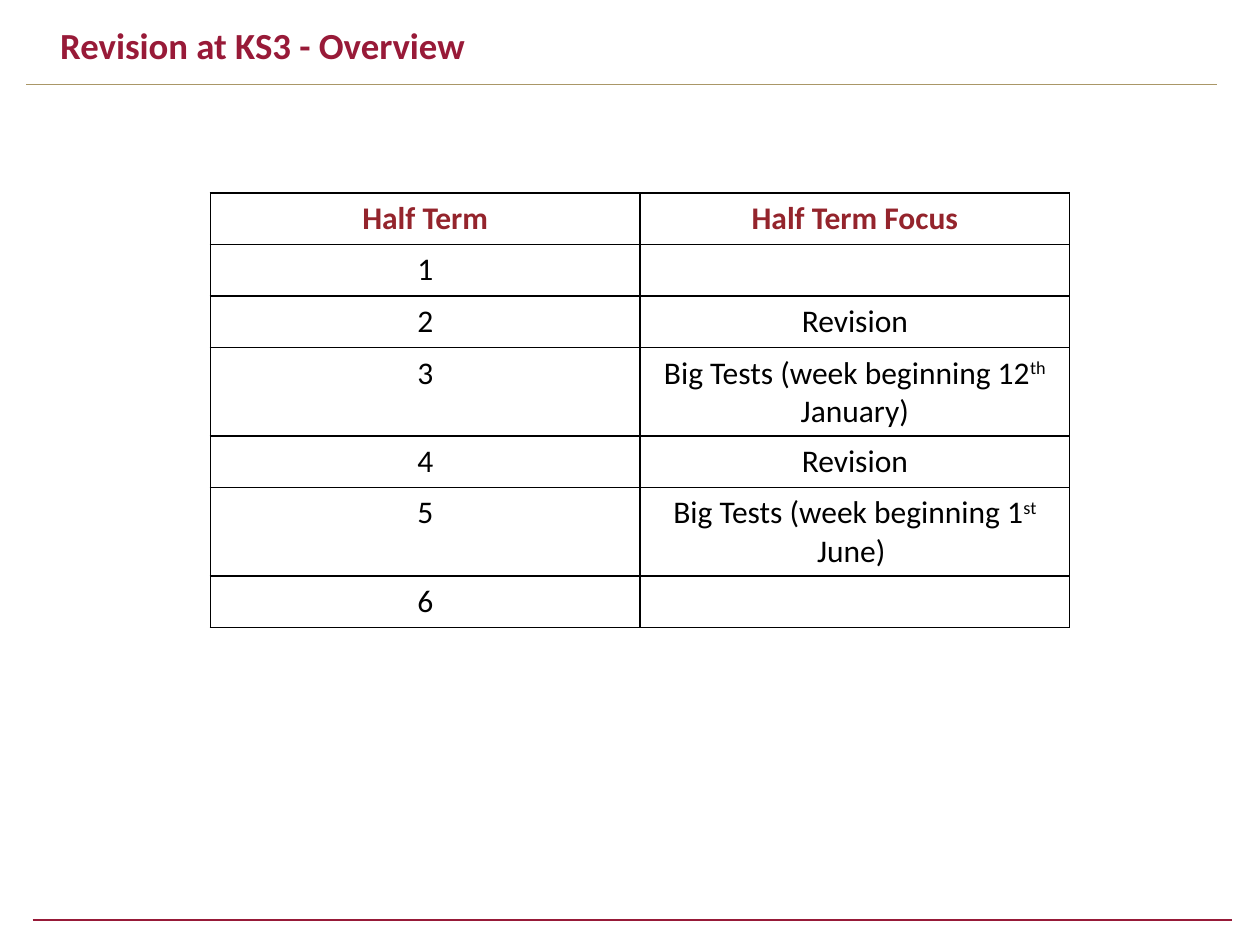
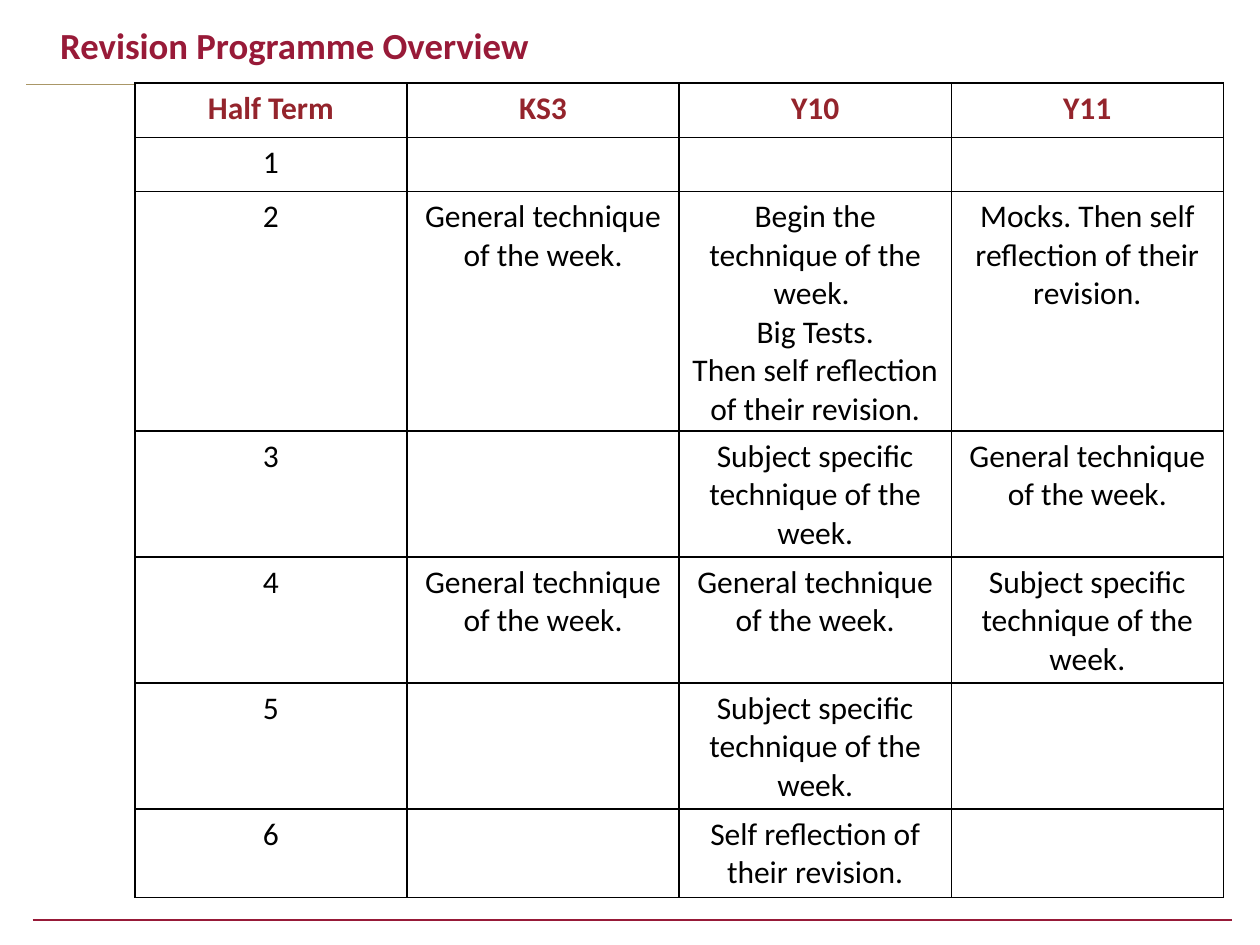
from lxml import etree
from pptx import Presentation
from pptx import util as u
from pptx.dml.color import RGBColor
from pptx.enum import shapes, text
from pptx.oxml.ns import qn

BORDER, FILL = "000000", "FFFFFF"
TITLE = {"name": "Calibri", "size": u.Pt(21), "bold": True, "color": "981A38"}
HEAD = {"name": "Calibri", "size": u.Pt(18), "bold": True, "color": "94242C"}
BODY = {**HEAD, "bold": False, "color": "000000"}

GENERAL = "General technique of the week."
SPECIFIC = "Subject specific technique of the week."
REFLECT = "elf reflection of their revision."


def rgb(color):
    return RGBColor.from_string(color)


def set_font(font, style):
    for key, value in style.items():
        if key == "color":
            font.color.rgb = rgb(value)
        else:
            setattr(font, key, value)


def add_borders(cell, width=1):
    tcPr = cell._tc.get_or_add_tcPr()
    for side in "LRTB":
        ln = etree.SubElement(tcPr, qn(f"a:ln{side}"), w=str(u.Pt(width)))
        fill = etree.SubElement(ln, qn("a:solidFill"))
        etree.SubElement(fill, qn("a:srgbClr"), val=BORDER)


class Deck:
    def __init__(self):
        self.prs = Presentation()
        self.prs.slide_width, self.prs.slide_height = u.Inches(10), u.Inches(7.5)
        self.s = None

    def slide(self, title):
        self.s = self.prs.slides.add_slide(self.prs.slide_layouts[6])
        self.rule(0.26, 9.78, 7.3, "971A38", 1)
        self.rule(0.21, 9.66, 0.67, "AA9767", 0.5)
        self.title(title)

    def rule(self, x1, x2, y, color, width):
        ends = [u.Inches(v) for v in (x1, y, x2, y)]
        line = self.s.shapes.add_connector(shapes.MSO_CONNECTOR.STRAIGHT, *ends)
        line.line.color.rgb = rgb(color)
        line.line.width = u.Pt(width)
        etree.SubElement(line._element.spPr, qn("a:effectLst"))

    def title(self, words):
        box = [u.Inches(v) for v in (0.38, 0.13, 6.27, 0.45)]
        tf = self.s.shapes.add_textbox(*box).text_frame
        tf.word_wrap = True
        self.fill_text(tf, words, TITLE)

    def fill_text(self, tf, words, style, align=None):
        """Add one paragraph per line; text between ^ marks is superscript."""
        for i, line in enumerate(words.split("\n")):
            p = tf.add_paragraph() if i else tf.paragraphs[0]
            p.alignment = align
            set_font(p.font, style)
            for j, part in enumerate(line.split("^")):
                if not part:
                    continue
                r = p.add_run()
                r.text = part
                set_font(r.font, style)
                if j % 2:
                    r._r.get_or_add_rPr().set("baseline", "30000")

    def table(self, x, y, col_width, heights, rows):
        n = len(rows[0])
        size = [u.Inches(v) for v in (x, y, col_width * n, sum(heights))]
        tbl = self.s.shapes.add_table(len(rows), n, *size).table
        for col in tbl.columns:
            col.width = u.Inches(col_width)
        for i, (row, height) in enumerate(zip(rows, heights)):
            tbl.rows[i].height = u.Inches(height)
            for j, words in enumerate(row):
                cell = tbl.cell(i, j)
                add_borders(cell)
                cell.fill.solid()
                cell.fill.fore_color.rgb = rgb(FILL)
                self.fill_text(cell.text_frame, words, BODY if i else HEAD,
                               text.PP_ALIGN.CENTER)


def main():
    deck = Deck()

    deck.slide("Revision at KS3 - Overview")
    deck.table(1.67, 1.53, 3.41, [0.41, 0.41, 0.41, 0.7, 0.41, 0.7, 0.41], [
        ("Half Term", "Half Term Focus"),
        ("1", ""),
        ("2", "Revision"),
        ("3", "Big Tests (week beginning 12^th^ January)"),
        ("4", "Revision"),
        ("5", "Big Tests (week beginning 1^st^ June) "),
        ("6", ""),
    ])

    deck.slide("Revision Programme Overview")
    deck.table(1.07, 0.66, 2.16, [0.43, 0.43, 1.9, 1, 1, 1, 0.7], [
        ("Half Term", "KS3", "Y10", "Y11"),
        ("1", "", "", ""),
        ("2", GENERAL,
         f"Begin the technique of the week. \nBig Tests.\nThen s{REFLECT}",
         f"Mocks. Then s{REFLECT}"),
        ("3", "", SPECIFIC, GENERAL),
        ("4", GENERAL, GENERAL, SPECIFIC),
        ("5", "", SPECIFIC, ""),
        ("6", "", f"S{REFLECT}", ""),
    ])

    deck.prs.save("out.pptx")


if __name__ == "__main__":
    main()
